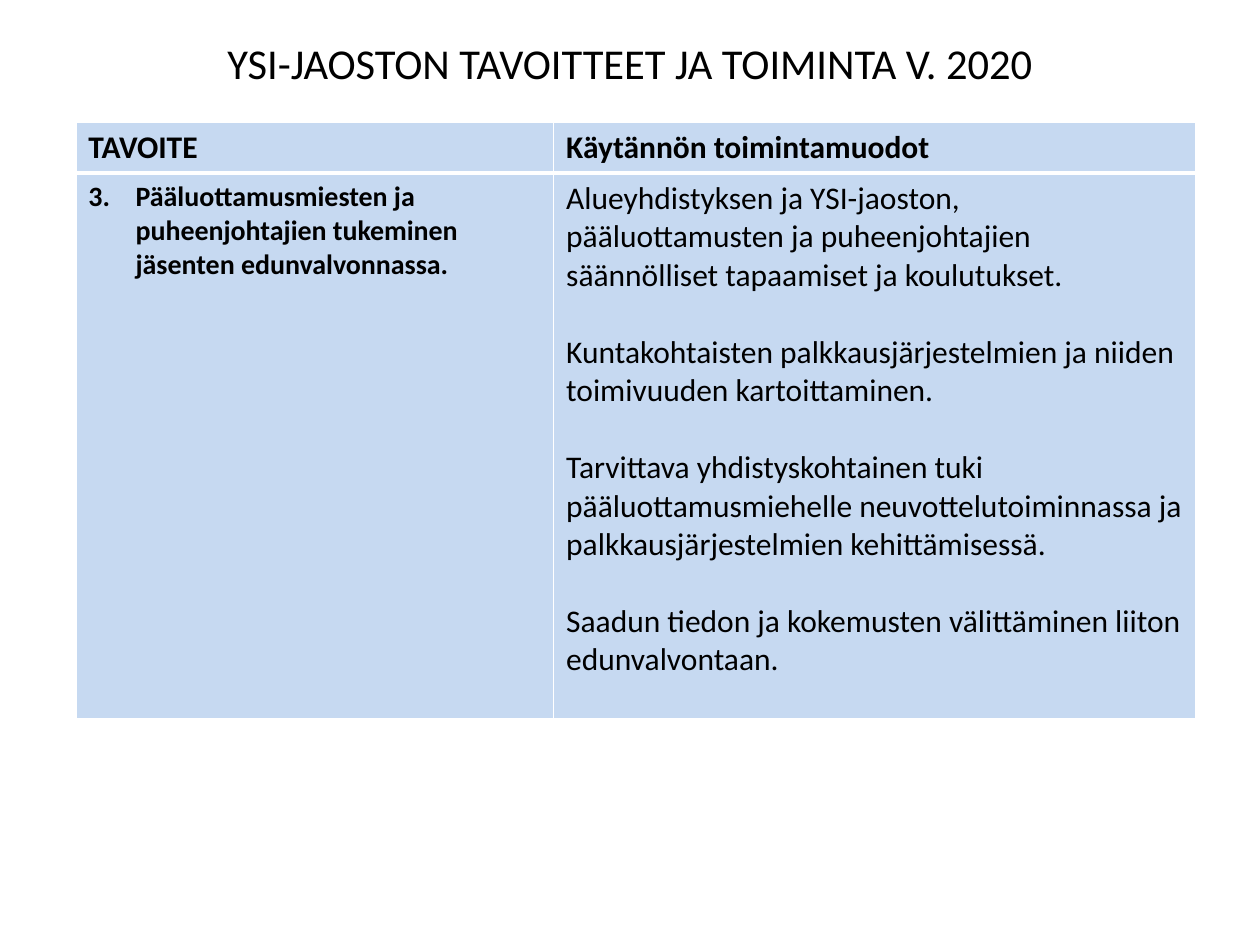
from dataclasses import dataclass

from lxml.etree import SubElement
from pptx import Presentation
from pptx.dml.color import RGBColor
from pptx.enum.text import MSO_ANCHOR, PP_ALIGN
from pptx.oxml.ns import qn
from pptx.util import Cm, Pt


@dataclass(frozen=True)
class Theme:
    font: str = "Calibri"
    ink: str = "000000"
    cell: str = "C6D9F1"
    rule: str = "FFFFFF"
    title: float = 24.3
    body: float = 18
    goal: float = 16
    gap: float = 22
    thin: float = 1
    thick: float = 3


class SlideBuilder:
    """Draws styled elements on the current slide."""

    def __init__(self, slide, theme):
        self.slide = slide
        self.theme = theme

    def text(self, frame, paragraphs, size, bold=False, align=PP_ALIGN.LEFT):
        style = {"name": self.theme.font, "size": Pt(size), "bold": bold}
        for index, words in enumerate(paragraphs):
            paragraph = frame.add_paragraph() if index else frame.paragraphs[0]
            paragraph.alignment = align
            paragraph.space_before = Pt(self.theme.gap if index else 0)
            run = paragraph.add_run()
            run.text = words
            for attribute, value in style.items():
                setattr(run.font, attribute, value)
            run.font.color.rgb = RGBColor.from_string(self.theme.ink)

    def title(self, words, left, top, width, height):
        frame = self.slide.shapes.add_textbox(left, top, width, height).text_frame
        layout = {"word_wrap": True, "vertical_anchor": MSO_ANCHOR.MIDDLE,
                  "margin_top": 0, "margin_bottom": Cm(0.15)}
        for attribute, value in layout.items():
            setattr(frame, attribute, value)
        self.text(frame, [words], self.theme.title, align=PP_ALIGN.CENTER)

    def table(self, left, top, widths, heights):
        grid = self.slide.shapes.add_table(
            len(heights), len(widths), left, top, sum(widths), sum(heights)).table
        for attribute, value in {"first_row": False, "horz_banding": False}.items():
            setattr(grid, attribute, value)
        for column, width in zip(grid.columns, widths):
            column.width = width
        for row, height in zip(grid.rows, heights):
            row.height = height
        return grid

    def cell(self, cell, paragraphs, size, bold, borders):
        self.text(cell.text_frame, paragraphs, size, bold)
        properties = cell._tc.get_or_add_tcPr()
        for side, points in borders.items():
            line = SubElement(properties, qn(f"a:ln{side}"), w=str(Pt(points)))
            fill = SubElement(line, qn("a:solidFill"))
            SubElement(fill, qn("a:srgbClr"), val=self.theme.rule)
        cell.fill.solid()
        cell.fill.fore_color.rgb = RGBColor.from_string(self.theme.cell)

    def number(self, paragraph, start, indent):
        properties = paragraph._p.get_or_add_pPr()
        for attribute, value in {"marL": indent, "indent": -indent}.items():
            properties.set(attribute, str(value))
        SubElement(properties, qn("a:buFont"), typeface="+mj-lt")
        SubElement(properties, qn("a:buAutoNum"), type="arabicPeriod", startAt=str(start))


def main():
    theme = Theme()
    deck = Presentation()
    deck.slide_width, deck.slide_height = Cm(25.4), Cm(19.05)
    builder = SlideBuilder(deck.slides.add_slide(deck.slide_layouts[6]), theme)

    builder.title("YSI-JAOSTON TAVOITTEET JA TOIMINTA V. 2020",
                  Cm(1.27), Cm(0.76), Cm(22.86), Cm(1.17))

    goals = builder.table(Cm(1.53), Cm(2.47), [Cm(9.63), Cm(12.95)], [Cm(1.02), Cm(11)])
    thin = dict.fromkeys("LRTB", theme.thin)
    header_borders = {**thin, "B": theme.thick}
    body_borders = {**thin, "T": theme.thick}
    activities = [
        "Alueyhdistyksen ja YSI-jaoston, pääluottamusten ja puheenjohtajien "
        "säännölliset tapaamiset ja koulutukset.",
        "Kuntakohtaisten palkkausjärjestelmien ja niiden toimivuuden kartoittaminen.",
        "Tarvittava yhdistyskohtainen tuki pääluottamusmiehelle neuvottelutoiminnassa "
        "ja palkkausjärjestelmien kehittämisessä.",
        "Saadun tiedon ja kokemusten välittäminen liiton edunvalvontaan.",
    ]
    goal = ["Pääluottamusmiesten ja puheenjohtajien tukeminen jäsenten edunvalvonnassa."]
    contents = [
        (0, 0, ["TAVOITE"], theme.body, True, header_borders),
        (0, 1, ["Käytännön toimintamuodot"], theme.body, True, header_borders),
        (1, 0, goal, theme.goal, True, body_borders),
        (1, 1, activities, theme.body, False, body_borders),
    ]
    for row, column, *content in contents:
        builder.cell(goals.cell(row, column), *content)
    builder.number(goals.cell(1, 0).text_frame.paragraphs[0], 3, Cm(0.95))

    deck.save("out.pptx")


if __name__ == "__main__":
    main()
